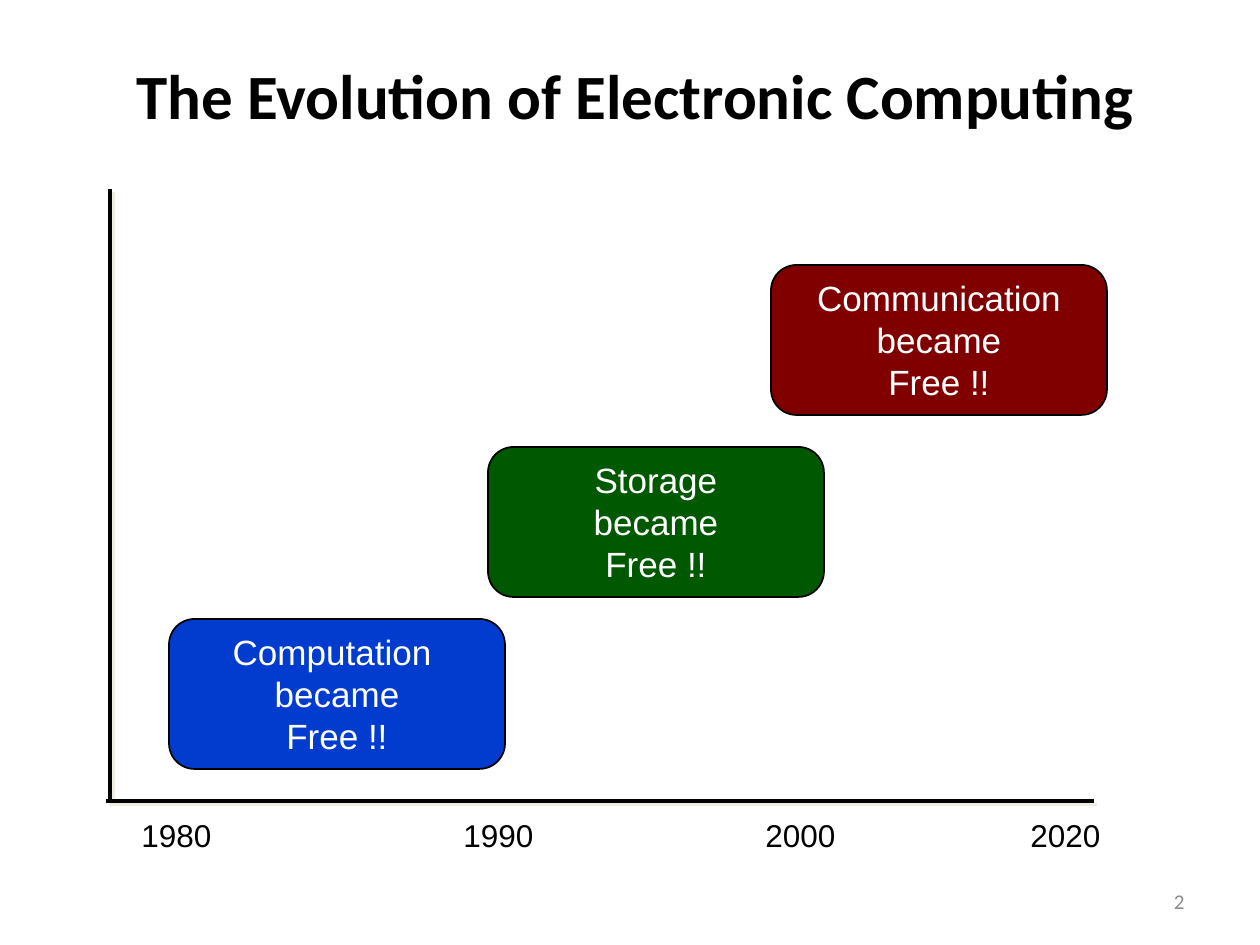
from lxml import etree
from pptx import Presentation
from pptx.dml.color import RGBColor
from pptx.enum.shapes import MSO_CONNECTOR, MSO_SHAPE
from pptx.enum.text import MSO_ANCHOR, PP_ALIGN
from pptx.oxml.ns import qn
from pptx.util import Emu, Pt

PX = 914400 / 126
LEFT, MID, RIGHT = PP_ALIGN.LEFT, PP_ALIGN.CENTER, PP_ALIGN.RIGHT
TOP, CENTRE = MSO_ANCHOR.TOP, MSO_ANCHOR.MIDDLE
ROUND, LINE = MSO_SHAPE.ROUNDED_RECTANGLE, MSO_CONNECTOR.STRAIGHT

BLACK = RGBColor(0x00, 0x00, 0x00)
WHITE = RGBColor(0xFF, 0xFF, 0xFF)
GREY = RGBColor(0x8C, 0x8C, 0x8C)
CREAM = RGBColor(0xEE, 0xEC, 0xE1)
BLUE = RGBColor(0x02, 0x3C, 0xCE)
GREEN = RGBColor(0x00, 0x58, 0x00)
RED = RGBColor(0x80, 0x00, 0x00)

YEARS = [("1980", 22), ("1990", 344), ("2000", 646), ("2020", 911)]
# subject, left and top within the chart, fill
STEPS = [
    ("Computation ", 62, 430, BLUE),
    ("Storage", 381, 258, GREEN),
    ("Communication", 664, 76, RED),
]


def emu(*px):
    return [Emu(round(n * PX)) for n in px]


def write(shape, text, size, color, font="Arial", align=LEFT,
          anchor=TOP, wrap=False, bold=False):
    frame = shape.text_frame
    frame.text = text
    frame.word_wrap = wrap
    frame.vertical_anchor = anchor
    for para in frame.paragraphs:
        para.alignment = align
        for run in para.runs:
            run.font.name = font
            run.font.size = Pt(size)
            run.font.bold = bold
            run.font.color.rgb = color


def add_axis(slide, *ends):
    axis = slide.shapes.add_connector(LINE, *emu(*ends))
    axis.line.color.rgb = BLACK
    axis.line.width = Pt(2.25)
    # soft offset shadow
    fx = etree.SubElement(axis._element.spPr, qn("a:effectLst"))
    shade = etree.SubElement(fx, qn("a:outerShdw"), dist=str(Pt(2.8)),
                             dir="2700000", algn="ctr", rotWithShape="0")
    etree.SubElement(shade, qn("a:srgbClr"), val=str(CREAM))


def add_step(slide, box, topic, fill):
    step = slide.shapes.add_shape(ROUND, *emu(*box))
    step.adjustments[0] = 0.17
    step.shadow.inherit = False
    step.fill.solid()
    step.fill.fore_color.rgb = fill
    step.line.color.rgb = BLACK
    step.line.width = Pt(1)
    write(step, f"{topic}\nbecame\nFree !!", 20, WHITE,
          align=MID, anchor=CENTRE)


def add_title(slide, box):
    title = slide.shapes.title
    title.left, title.top, title.width, title.height = emu(*box)
    write(title, "The Evolution of Electronic Computing", 36, BLACK,
          "Calibri", MID, CENTRE, True, True)


def add_chart(slide, box):
    x, y, w, h = box
    base = y + h
    # axes
    add_axis(slide, x + 3, y, x + 3, base)
    add_axis(slide, x - 1, base, x + w, base)
    # year labels
    for year, dx in YEARS:
        label = slide.shapes.add_textbox(*emu(x + dx, base + 9, 96, 50))
        write(label, year, 18, BLACK)
    # rising steps
    for topic, dx, dy, fill in STEPS:
        add_step(slide, (x + dx, y + dy, 336, 150), topic, fill)


def add_number(slide, box):
    note = slide.shapes.add_textbox(*emu(*box))
    write(note, "2", 12, GREY, "Calibri", RIGHT, CENTRE, True)


def main():
    prs = Presentation()
    prs.slide_width, prs.slide_height = emu(1260, 945)
    slide = prs.slides.add_slide(prs.slide_layouts[5])
    add_number(slide, (903, 876, 294, 50))
    add_title(slide, (42, 42, 1187, 105))
    add_chart(slide, (107, 189, 987, 612))
    prs.save("out.pptx")


if __name__ == "__main__":
    main()
